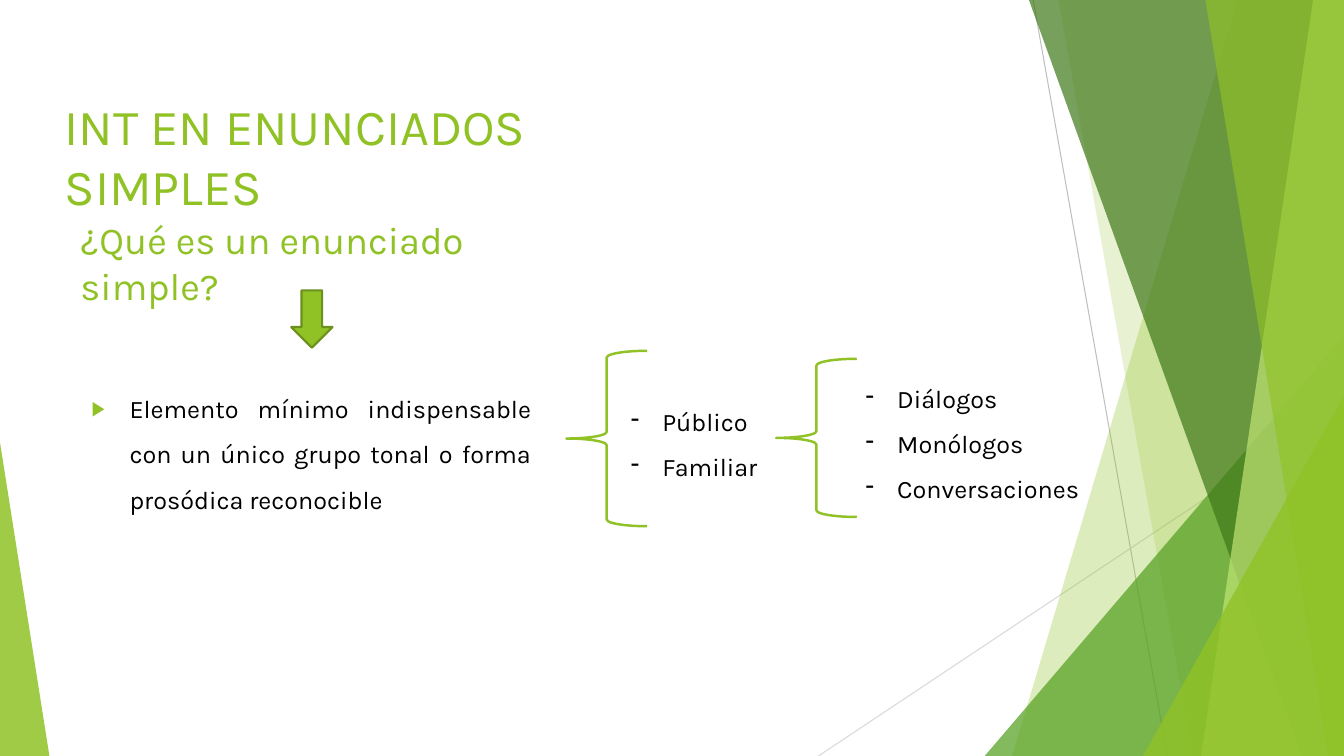
from lxml import etree
from pptx import Presentation
from pptx.dml.color import RGBColor
from pptx.enum.shapes import MSO_CONNECTOR, MSO_SHAPE
from pptx.enum.text import MSO_ANCHOR, MSO_AUTO_SIZE, PP_ALIGN
from pptx.oxml.ns import qn
from pptx.util import Pt

LINE = MSO_CONNECTOR.STRAIGHT
TRI = MSO_SHAPE.ISOSCELES_TRIANGLE
ARROW = MSO_SHAPE.DOWN_ARROW
BRACE = MSO_SHAPE.LEFT_BRACE
TOP = MSO_ANCHOR.TOP
NONE = MSO_AUTO_SIZE.NONE
LEFT, JUST = PP_ALIGN.LEFT, PP_ALIGN.JUSTIFY

HUES = {
    "lime": "90C226", "leaf": "54A021", "pine": "3F7819", "pale": "C0E474",
    "edge": "6B901C", "gray": "BFBFBF", "mist": "D9D9D9", "black": "000000",
}
RGB = {name: RGBColor.from_string(code) for name, code in HUES.items()}
WIDE, HIGH = 960, 540

deck = Presentation()
deck.slide_width, deck.slide_height = Pt(WIDE), Pt(HIGH)
slide = deck.slides.add_slide(deck.slide_layouts[1])
shapes = slide.shapes
title, body = slide.placeholders

for x1, y1, x2, hue in [(738, 0, 833.8, "gray"), (WIDE, 290.2, 584.6, "mist")]:
    line = shapes.add_connector(LINE, Pt(x1), Pt(y1), Pt(x2), Pt(HIGH))
    line.line.color.rgb = RGB[hue]
    line.line.width = Pt(0.75)
    etree.SubElement(line.element.spPr, qn("a:effectLst"))

facets = [
    ("band", 884.2, 722.9, "lime", 30),
    ("band", 756, 851.8, "lime", 20),
    ("tri", 703.4, 239.8, 256.6, 1, "leaf", 72),
    ("band", 735.1, 929.5, "pine", 70),
    ("band", 938.2, 858.2, "pale", 70),
    ("band", 861.1, 949, "lime", 65),
    ("tri", 816.5, 283, 143.5, 1, "lime", 80),
    ("tri", 0, 316.1, 35.3, 0, "lime", 85),
]
for kind, *spot, hue, alpha in facets:
    if kind == "band":
        top, foot = spot
        path = shapes.build_freeform(top, 0, scale=Pt(1))
        path.add_line_segments([(WIDE, 0), (WIDE, HIGH), (foot, HIGH)])
        facet = path.convert_to_shape()
    else:
        x, y, w, peak = spot
        facet = shapes.add_shape(TRI, Pt(x), Pt(y), Pt(w), Pt(HIGH - y))
        facet.adjustments[0] = peak
    facet.shadow.inherit = False
    facet.fill.solid()
    facet.fill.fore_color.rgb = RGB[hue]
    facet.line.fill.background()
    tint = facet.element.spPr.find(qn("a:solidFill"))[0]
    etree.SubElement(tint, qn("a:alpha"), val=str(alpha * 1000))

for holder in (title, body):
    node = holder.element
    node.getparent().append(node)


def write(box, spot, lines, size, hue, mark=None, indent=0, align=LEFT):
    box.left, box.top, box.width, box.height = map(Pt, spot)
    frame = box.text_frame
    frame.word_wrap = True
    frame.auto_size = NONE
    frame.vertical_anchor = TOP
    frame.text = "\n".join(lines)
    for para in frame.paragraphs:
        para.alignment = align
        para.space_before = Pt(0)
        if mark:
            para.line_spacing = 1.5
            props = para._p.get_or_add_pPr()
            props.set("marL", str(Pt(indent)))
            props.set("indent", str(-Pt(indent)))
            if mark == "▶":
                para.space_before = Pt(10)
                tone = etree.SubElement(props, qn("a:buClr"))
                etree.SubElement(tone, qn("a:srgbClr"), val=HUES["lime"])
                etree.SubElement(props, qn("a:buSzPct"), val="80000")
            etree.SubElement(props, qn("a:buChar"), char=mark)
        para.font.name = "Karla"
        para.font.size = Pt(size)
        para.font.color.rgb = RGB[hue]


write(title, (39, 64, 476.6, 56), ["INT EN ENUNCIADOS SIMPLES"], 36, "lime")
write(body, (58.3, 266.4, 328.3, 133.2),
      ["Elemento mínimo indispensable con un único grupo tonal o forma prosódica reconocible"],
      18, "black", "▶", 27, JUST)

notes = [
    ((50.4, 151.2, 393, 56), ["¿Qué es un enunciado simple?"], 27.2, "lime"),
    ((443.5, 275.8, 188, 68.4), ["Público", "Familiar"], 18, "black", "-", 22.5),
    ((611.3, 259.2, 173.5, 101.5), ["Diálogos", "Monólogos", "Conversaciones"],
     18, "black", "-", 22.5),
]
for spot, *rest in notes:
    write(shapes.add_textbox(*map(Pt, spot)), spot, *rest)

signs = [
    (ARROW, (208, 207.4, 29.5, 41), "edge", 1.5),
    (BRACE, (404.6, 250.6, 57.6, 125.3), "lime", 1.75),
    (BRACE, (554.4, 256.3, 57.6, 113), "lime", 1.75),
]
for kind, spot, hue, width in signs:
    sign = shapes.add_shape(kind, *map(Pt, spot))
    sign.shadow.inherit = False
    sign.line.color.rgb = RGB[hue]
    sign.line.width = Pt(width)
    if kind == ARROW:
        sign.fill.solid()
        sign.fill.fore_color.rgb = RGB["lime"]
    else:
        sign.fill.background()

deck.save("out.pptx")
